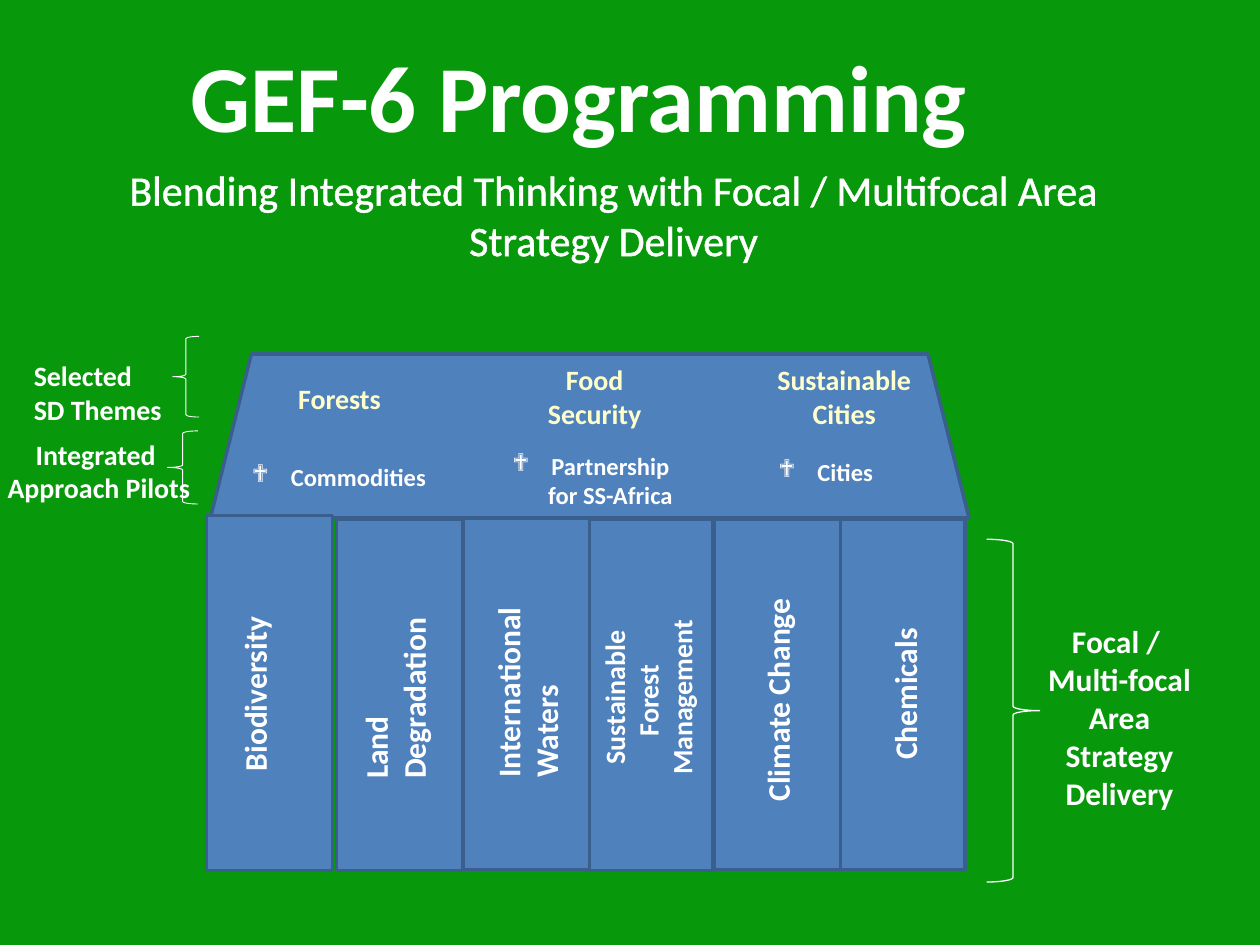
import pptx
import pptx.dml.color
import pptx.enum.shapes
import pptx.enum.text
import pptx.util
from lxml import etree
from pptx.oxml.ns import qn

Inches = pptx.util.Inches
SHAPES = pptx.enum.shapes.MSO_SHAPE
ALIGN = pptx.enum.text.PP_ALIGN

GREEN, BLUE, NAVY = "08980B", "4F81BD", "3A5F8C"
WHITE, CREAM = "FFFFFF", "FFFFCC"

TITLE = ("GEF-6 Programming", (1.38, 0.25, 6.43, 1.01))
SUBTITLE = ("Blending Integrated Thinking with Focal / Multifocal Area Strategy Delivery",
            (0.83, 1.25, 8.08, 0.91))

ROOF = (1.67, 2.81, 6.02, 1.3)
PILLARS_BEHIND_ROOF = [(6.66, 4.12, 2.78), (5.67, 4.12, 2.78), (4.66, 4.12, 2.79), (3.68, 4.11, 2.79)]
PILLARS_OVER_ROOF = [(2.67, 4.12, 2.79), (1.64, 4.09, 2.82)]
PILLAR_WIDTH = 1

FOCAL_AREAS = [
    ("Biodiversity", (1.82, 4.89, 0.5, 1.33), {}),
    ("Land \nDegradation", (2.78, 4.89, 0.81, 1.39), {}),
    ("International \nWaters", (3.83, 4.75, 0.81, 1.52), {}),
    ("Sustainable\nForest \nManagement", (4.69, 4.86, 1.01, 1.35), {"size": 16, "align": ALIGN.CENTER}),
    ("Climate Change", (5.97, 4.74, 0.5, 1.72), {}),
    ("Chemicals", (6.98, 4.98, 0.5, 1.15), {}),
]
THEMES = [
    ("Forests", (2.26, 2.98, 0.87, 0.37)),
    ("Food\nSecurity", (4.24, 2.83, 0.96, 0.64)),
    ("Sustainable\nCities", (6.06, 2.83, 1.28, 0.64)),
]
PILOTS = [
    ("Commodities", (1.89, 3.62, 1.6, 0.34), {"align": ALIGN.CENTER, "indent": 0.31}),
    ("Partnership\nfor SS-Africa", (3.43, 3.53, 2.02, 0.57),
     {"align": ALIGN.CENTER, "indent": 0.81, "level": 1}),
    ("Cities", (6.08, 3.58, 0.96, 0.34), {"indent": 0.31}),
]
ROW_LABELS = [
    ("Selected \nSD Themes", (0.17, 2.8, 1.23, 0.64), {}),
    ("Integrated \nApproach Pilots", (-0.05, 3.42, 1.67, 0.64), {"align": ALIGN.CENTER}),
]
DELIVERY = ("Focal / \vMulti-focal\vArea\vStrategy\vDelivery".replace("\v", "\n"),
            (8.21, 4.89, 1.35, 1.62))
BRACES = [
    (SHAPES.RIGHT_BRACE, (7.83, 4.28, 0.42, 2.72), 0.75),
    (SHAPES.LEFT_BRACE, (1.37, 2.67, 0.21, 0.64), 0.5),
    (SHAPES.LEFT_BRACE, (1.33, 3.42, 0.24, 0.58), 0.5),
]


def rgb(value):
    return pptx.dml.color.RGBColor.from_string(value)


def add_block(kind, place, line, width, fill=None):
    block = slide.shapes.add_shape(kind, *map(Inches, place))
    block.shadow.inherit = False
    if fill:
        block.fill.solid()
        block.fill.fore_color.rgb = rgb(fill)
    else:
        block.fill.background()
    block.line.color.rgb = rgb(line)
    block.line.width = pptx.util.Pt(width)


def add_bullet(paragraph, indent):
    properties = paragraph._p.get_or_add_pPr()
    properties.set("marL", str(Inches(indent)))
    properties.set("indent", str(-Inches(0.31)))
    etree.SubElement(properties, qn("a:buFont")).set("typeface", "Wingdings")
    etree.SubElement(properties, qn("a:buChar")).set("char", "❖")


def add_outline(run, color, width):
    outline = etree.Element(qn("a:ln"), w=str(pptx.util.Pt(width)))
    fill = etree.SubElement(outline, qn("a:solidFill"))
    etree.SubElement(fill, qn("a:srgbClr")).set("val", color)
    run._r.get_or_add_rPr().insert(0, outline)


def write(text, place, box=None, size=16, color=WHITE, bold=True, align=ALIGN.LEFT,
          wrap=False, upright=False, indent=None, level=0, outline=None):
    left, top, width, height = map(Inches, place)
    box = box or slide.shapes.add_textbox(left, top, width, height)
    box.left, box.top, box.width, box.height = left, top, width, height
    frame = box.text_frame
    frame.word_wrap = wrap
    frame.auto_size = pptx.enum.text.MSO_AUTO_SIZE.SHAPE_TO_FIT_TEXT
    frame.vertical_anchor = pptx.enum.text.MSO_ANCHOR.TOP
    if upright:
        frame._txBody.bodyPr.set("vert", "vert270")
    paragraph = frame.paragraphs[0]
    paragraph.text = text
    paragraph.alignment = align
    paragraph.level = level
    if indent:
        add_bullet(paragraph, indent)
    for run in paragraph.runs:
        run.font.name = "Calibri"
        run.font.size = pptx.util.Pt(size)
        run.font.bold = bold
        run.font.color.rgb = rgb(color)
        if outline:
            add_outline(run, color, outline)


deck = pptx.Presentation()
deck.slide_width, deck.slide_height = Inches(10), Inches(7.5)
slide = deck.slides.add_slide(deck.slide_layouts[5])
slide.background.fill.solid()
slide.background.fill.fore_color.rgb = rgb(GREEN)

write(*TITLE, box=slide.shapes.title, size=54, align=ALIGN.CENTER)
write(*SUBTITLE, size=24, bold=False, align=ALIGN.CENTER, wrap=True, outline=1.45)

house = [(SHAPES.RECTANGLE, (left, top, PILLAR_WIDTH, height))
         for left, top, height in PILLARS_BEHIND_ROOF + PILLARS_OVER_ROOF]
house.insert(len(PILLARS_BEHIND_ROOF), (SHAPES.TRAPEZOID, ROOF))
for kind, place in house:
    add_block(kind, place, NAVY, 2, fill=BLUE)
for kind, place, width in BRACES:
    add_block(kind, place, WHITE, width)

for text, place, style in FOCAL_AREAS:
    write(text, place, **{"size": 18, "upright": True, **style})
for text, place in THEMES:
    write(text, place, color=CREAM, align=ALIGN.CENTER)
for text, place, style in PILOTS:
    write(text, place, size=14, **style)
for text, place, style in ROW_LABELS:
    write(text, place, **style)
write(*DELIVERY, size=18, align=ALIGN.CENTER)

deck.save("out.pptx")
